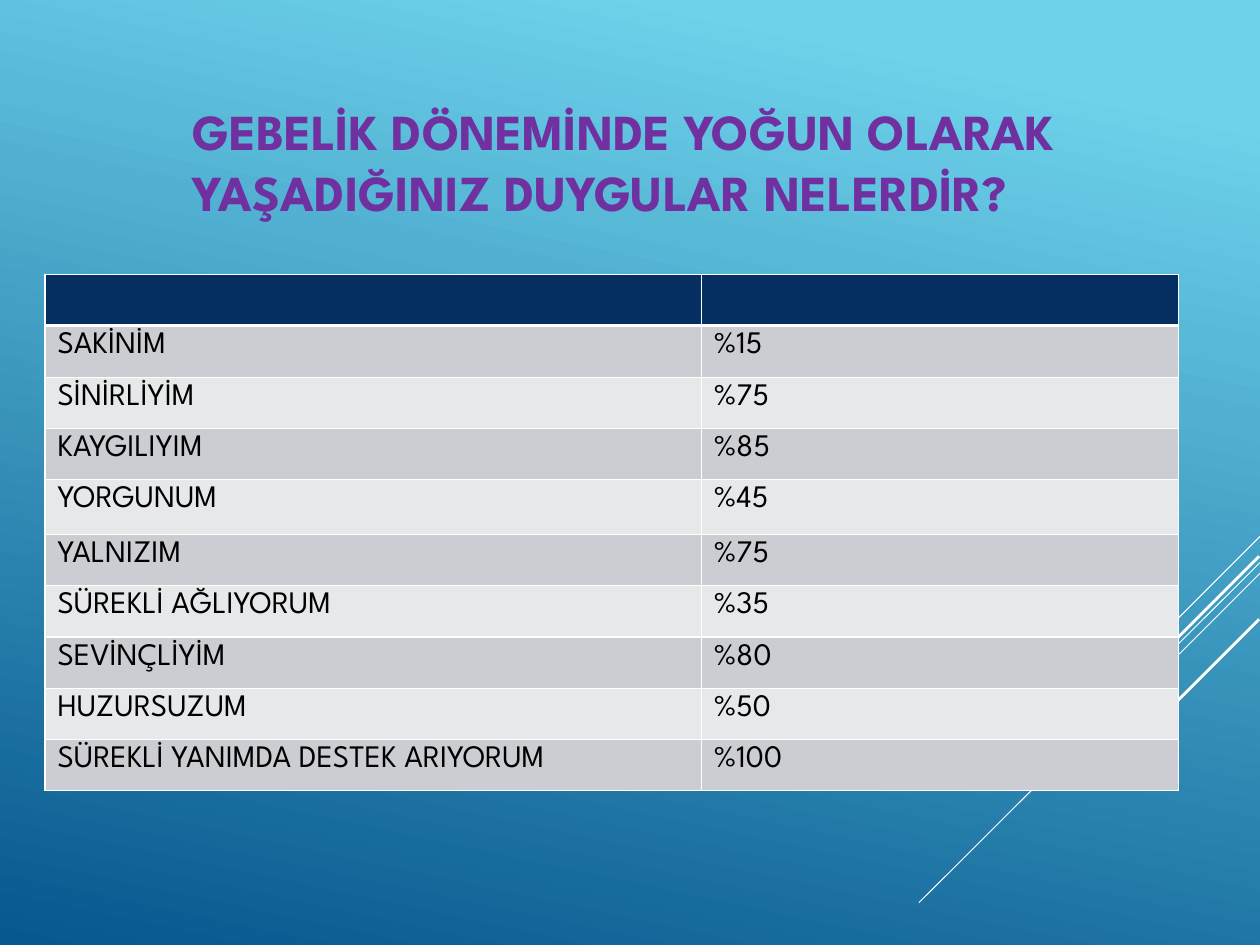
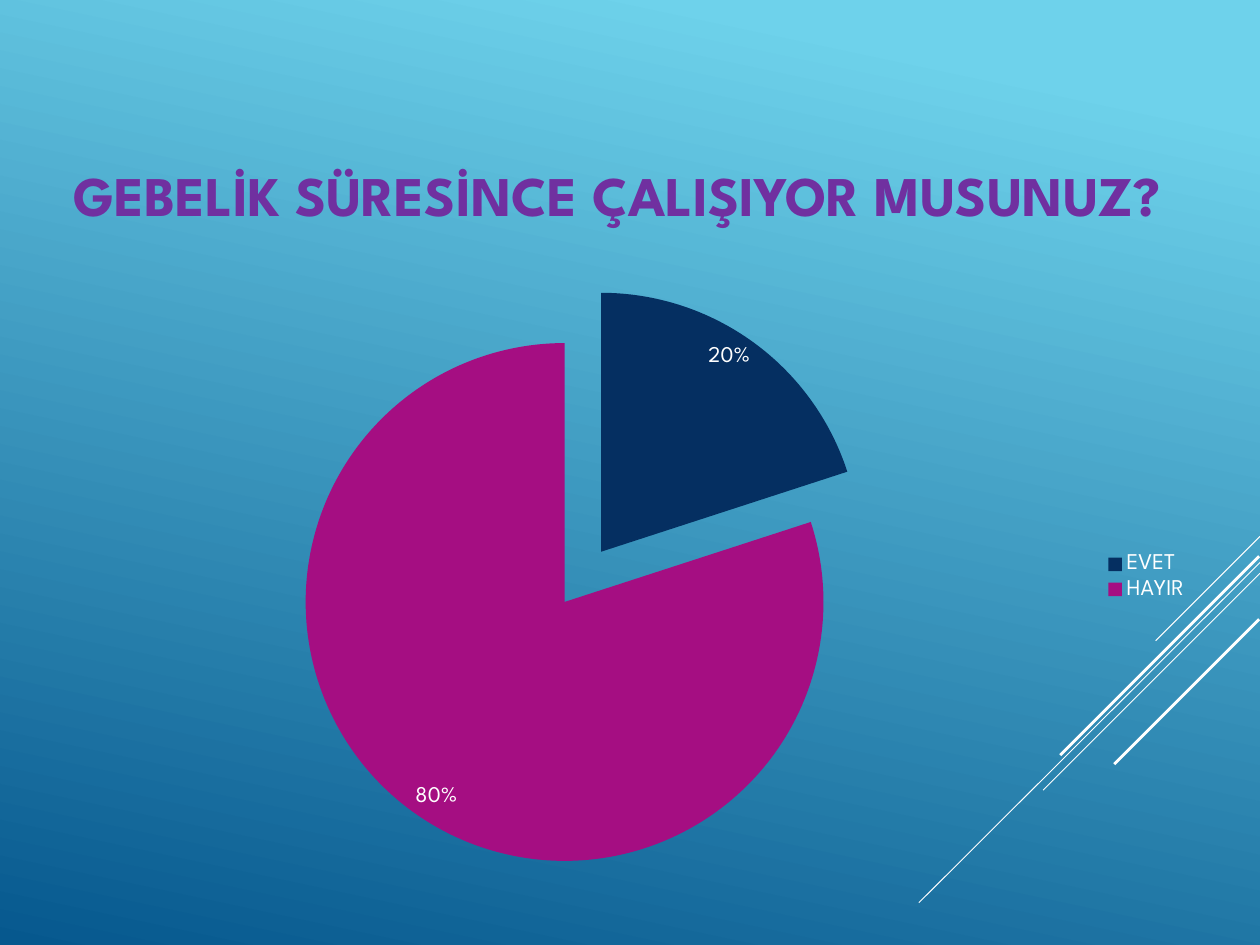
from dataclasses import dataclass

from lxml import etree
from pptx import Presentation
from pptx import util as u
from pptx.chart import data
from pptx.dml import color
from pptx.enum import chart as charts
from pptx.enum import shapes, text
from pptx.oxml import ns

FONT = "League Spartan"
COLORS = {
    "sky": "6ED2EB",
    "deep": "06588E",
    "title": "7030A0",
    "white": "FFFFFF",
    "black": "000000",
    "navy": "052F61",
    "magenta": "A50E82",
    "band_dark": "CCCDD2",
    "band_light": "E7E8EA",
}


@dataclass(frozen=True)
class Stripe:
    x1: float
    y1: float
    x2: float
    y2: float
    weight: float


@dataclass(frozen=True)
class Title:
    wording: str
    left: float
    top: float
    width: float
    height: float
    size: float


STRIPES = [
    Stripe(14, 5.96, 12.84, 7.12, 0.75),
    Stripe(14, 6.25, 10.21, 10.03, 0.75),
    Stripe(14, 6.37, 11.59, 8.78, 0.75),
    Stripe(13.99, 6.18, 11.78, 8.39, 2.25),
    Stripe(13.99, 6.88, 12.38, 8.49, 2.25),
]
FEELINGS_TITLE = Title(
    "GEBELİK DÖNEMİNDE YOĞUN OLARAK YAŞADIĞINIZ DUYGULAR NELERDİR?",
    2.04, 0.62, 10.04, 2.33, 40.3,
)
WORK_TITLE = Title(
    "GEBELİK SÜRESİNCE ÇALIŞIYOR MUSUNUZ?", 0.72, 1.28, 12.6, 1.75, 44.8
)
FEELINGS = [
    ("", ""),
    ("SAKİNİM", "%15"),
    ("SİNİRLİYİM", "%75"),
    ("KAYGILIYIM", "%85"),
    ("YORGUNUM", "%45"),
    ("YALNIZIM", "%75"),
    ("SÜREKLİ AĞLIYORUM", "%35"),
    ("SEVİNÇLİYİM", "%80"),
    ("HUZURSUZUM", "%50"),
    ("SÜREKLİ YANIMDA DESTEK ARIYORUM", "%100"),
]
COLUMN_WIDTHS = [7.29, 5.31]
ROW_HEIGHT = 0.57
TALL_ROW, TALL_HEIGHT = 4, 0.61


def rgb(name: str) -> color.RGBColor:
    return color.RGBColor.from_string(COLORS[name])


def style_font(font, size: float, color_name: str, bold: bool = False) -> None:
    font.name = FONT
    font.size = u.Pt(size)
    font.bold = bold
    font.color.rgb = rgb(color_name)


def paint_fill(fill, color_name: str) -> None:
    fill.solid()
    fill.fore_color.rgb = rgb(color_name)


def paint_background(slide) -> None:
    fill = slide.background.fill
    fill.gradient()
    fill.gradient_angle = 360 - 102
    for stop, name, position in zip(fill.gradient_stops, ("sky", "deep"), (0.1, 1)):
        stop.color.rgb = rgb(name)
        stop.position = position


def draw_stripe(slide, stripe: Stripe) -> None:
    connector = slide.shapes.add_connector(
        shapes.MSO_CONNECTOR.STRAIGHT,
        u.Inches(stripe.x1), u.Inches(stripe.y1),
        u.Inches(stripe.x2), u.Inches(stripe.y2),
    )
    connector.line.color.rgb = rgb("white")
    connector.line.width = u.Pt(stripe.weight)
    etree.SubElement(connector._element.spPr, ns.qn("a:effectLst"))


def draw_title(slide, title: Title) -> None:
    shape = slide.shapes.add_textbox(
        u.Inches(title.left), u.Inches(title.top),
        u.Inches(title.width), u.Inches(title.height),
    )
    frame = shape.text_frame
    frame.word_wrap = True
    frame.vertical_anchor = text.MSO_ANCHOR.MIDDLE
    frame.text = title.wording
    style_font(frame.paragraphs[0].runs[0].font, title.size, "title", bold=True)


def start_slide(presentation, title: Title):
    slide = presentation.slides.add_slide(presentation.slide_layouts[6])
    paint_background(slide)
    for stripe in STRIPES:
        draw_stripe(slide, stripe)
    draw_title(slide, title)
    return slide


def draw_borders(cell, top: float, bottom: float) -> None:
    properties = cell._tc.get_or_add_tcPr()
    weights = {"a:lnL": 1, "a:lnR": 1, "a:lnT": top, "a:lnB": bottom}
    for position, (tag, weight) in enumerate(weights.items()):
        line = etree.Element(ns.qn(tag), w=str(u.Pt(weight)))
        solid = etree.SubElement(line, ns.qn("a:solidFill"))
        etree.SubElement(solid, ns.qn("a:srgbClr"), val=COLORS["white"])
        properties.insert(position, line)


def fill_cell(cell, wording: str, row: int) -> None:
    if row == 0:
        paint_fill(cell.fill, "navy")
    else:
        paint_fill(cell.fill, "band_dark" if row % 2 else "band_light")
    draw_borders(cell, top=3 if row == 1 else 1, bottom=3 if row == 0 else 1)
    cell.margin_left = cell.margin_right = u.Inches(0.14)
    cell.margin_top = cell.margin_bottom = u.Inches(0.07)
    if wording:
        cell.text_frame.text = wording
        style_font(cell.text_frame.paragraphs[0].runs[0].font, 25, "black")


def draw_feelings_table(slide) -> None:
    table = slide.shapes.add_table(
        len(FEELINGS), len(COLUMN_WIDTHS),
        u.Inches(0.5), u.Inches(3.05), u.Inches(12.6), u.Inches(5.72),
    ).table
    for column, width in zip(table.columns, COLUMN_WIDTHS):
        column.width = u.Inches(width)
    for row, wordings in enumerate(FEELINGS):
        height = TALL_HEIGHT if row == TALL_ROW else ROW_HEIGHT
        table.rows[row].height = u.Inches(height)
        for column, wording in enumerate(wordings):
            fill_cell(table.cell(row, column), wording, row)


def draw_work_chart(slide) -> None:
    chart_data = data.CategoryChartData()
    chart_data.categories = ["EVET", "HAYIR"]
    chart_data.add_series("Series 1", [20, 80])
    chart = slide.shapes.add_chart(
        charts.XL_CHART_TYPE.PIE,
        u.Inches(0.72), u.Inches(3.05), u.Inches(12.6), u.Inches(6.72), chart_data,
    ).chart
    style_font(chart.font, 18, "white")
    chart.has_title = False
    chart.has_legend = True
    chart.legend.position = charts.XL_LEGEND_POSITION.RIGHT
    chart.legend.include_in_layout = False

    plot = chart.plots[0]
    plot.vary_by_categories = True
    plot.has_data_labels = True
    labels = plot.data_labels
    labels.show_percentage = True
    labels.show_value = False
    labels.number_format = "0%"
    labels.number_format_is_linked = False
    labels.position = charts.XL_LABEL_POSITION.INSIDE_END
    style_font(labels.font, 18, "white")

    series = plot.series[0]
    for index, name in enumerate(("navy", "magenta")):
        paint_fill(series.points[index].format.fill, name)
    explosion = etree.Element(ns.qn("c:explosion"), val="12")
    series._element.find(ns.qn("c:dPt")).addprevious(explosion)


def main() -> None:
    presentation = Presentation()
    presentation.slide_width = u.Inches(14)
    presentation.slide_height = u.Inches(10.5)
    draw_feelings_table(start_slide(presentation, FEELINGS_TITLE))
    draw_work_chart(start_slide(presentation, WORK_TITLE))
    presentation.save("out.pptx")


if __name__ == "__main__":
    main()
